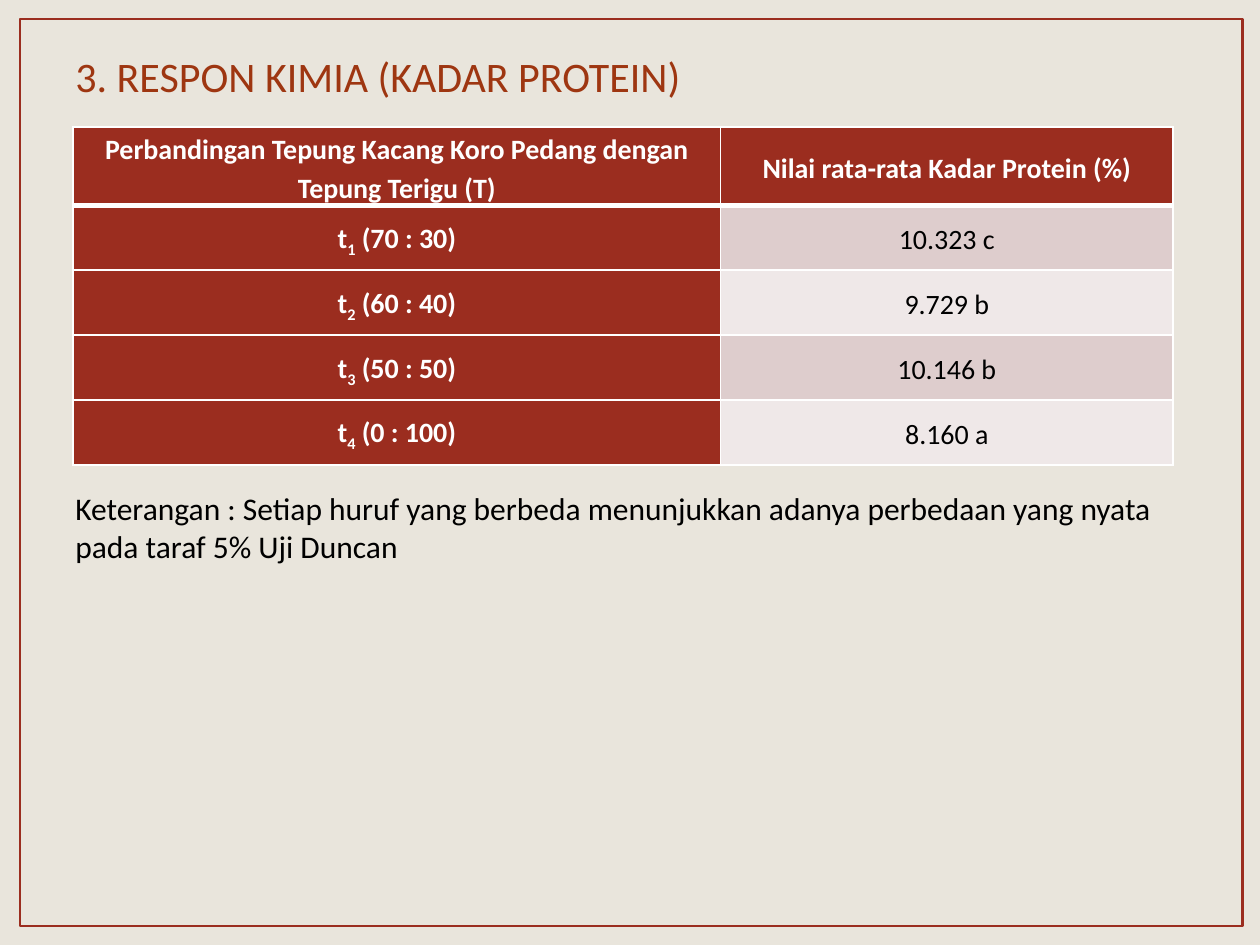
"""Build the protein response slide with its table of mean values."""
from lxml.etree import SubElement as Sub
from pptx import Presentation
from pptx.dml.color import RGBColor as RGB
from pptx.enum.shapes import MSO_SHAPE as Kind
from pptx.enum.text import MSO_ANCHOR as Anchor, PP_ALIGN as Align
from pptx.oxml.ns import qn
from pptx.util import Inches, Pt

RUST = RGB(0x9B, 0x2D, 0x1F)
TITLE = RGB(0x9E, 0x36, 0x11)
SAND = RGB(0xE9, 0xE5, 0xDC)
ROSE = RGB(0xDE, 0xCD, 0xCD)
PALE = RGB(0xEF, 0xE8, 0xE8)
WHITE = RGB(0xFF, 0xFF, 0xFF)
BLACK = RGB(0, 0, 0)

HEAD = ("Perbandingan Tepung Kacang Koro Pedang dengan Tepung Terigu (T)",
        "Nilai rata-rata Kadar Protein (%)")
ROWS = [("70 : 30", "10.323 c"), ("60 : 40", "9.729 b"),
        ("50 : 50", "10.146 b"), ("0 : 100", "8.160 a")]
COLS = (5.14, 3.59)
HIGH = (0.62,) + (0.515,) * len(ROWS)
CELL = {"vertical_anchor": Anchor.MIDDLE,
        "margin_left": Inches(0.07), "margin_right": Inches(0.07),
        "margin_top": 0, "margin_bottom": 0}
PARA = {"alignment": Align.CENTER, "line_spacing": 1.15}


def apply(item, form):
    for name, value in form.items():
        setattr(item, name, value)


def add_run(para, text, size, color, bold=False, base=0):
    run = para.add_run()
    run.text = text
    apply(run.font, {"name": "Calibri", "size": Pt(size), "bold": bold})
    run.font.color.rgb = color
    if base:
        run.font._element.set("baseline", str(base * 1000))


def add_text(slide, box, text, size, color):
    frame = slide.shapes.add_textbox(*map(Inches, box)).text_frame
    frame.word_wrap = True
    add_run(frame.paragraphs[0], text, size, color)


def add_frame(slide, box):
    frame = slide.shapes.add_shape(Kind.RECTANGLE, *map(Inches, box))
    frame.shadow.inherit = False
    frame.fill.background()
    frame.line.color.rgb = RUST
    frame.line.width = Pt(1.5)


def set_edges(cell, top, low):
    props = cell._tc.get_or_add_tcPr()
    for spot, (side, width) in enumerate(zip("LRTB", (1, 1, top, low))):
        edge = props.makeelement(qn(f"a:ln{side}"), {"w": str(Pt(width))})
        fill = Sub(edge, qn("a:solidFill"))
        Sub(fill, qn("a:srgbClr"), val=str(WHITE))
        props.insert(spot, edge)


def fill_cell(cell, parts, fill, color, bold, top=1, low=1):
    apply(cell, CELL)
    cell.fill.solid()
    cell.fill.fore_color.rgb = fill
    set_edges(cell, top, low)
    para = cell.text_frame.paragraphs[0]
    apply(para, PARA)
    for text, base in parts:
        add_run(para, text, 16, color, bold, base)


def add_grid(slide, left, top):
    box = map(Inches, (left, top, sum(COLS), sum(HIGH)))
    grid = slide.shapes.add_table(len(HIGH), len(COLS), *box).table
    for col, width in zip(grid.columns, COLS):
        col.width = Inches(width)
    for row, height in zip(grid.rows, HIGH):
        row.height = Inches(height)
    for col, text in enumerate(HEAD):
        fill_cell(grid.cell(0, col), [(text, 0)], RUST, WHITE, True, low=3)
    for row, (ratio, mean) in enumerate(ROWS, 1):
        edge = 3 if row == 1 else 1
        label = [("t", 0), (str(row), -25), (f" ({ratio})", 0)]
        band = ROSE if row % 2 else PALE
        fill_cell(grid.cell(row, 0), label, RUST, WHITE, True, top=edge)
        fill_cell(grid.cell(row, 1), [(mean, 0)], band, BLACK, False, top=edge)


def main():
    deck = Presentation()
    apply(deck, {"slide_width": Inches(10), "slide_height": Inches(7.5)})
    slide = deck.slides.add_slide(deck.slide_layouts[6])
    slide.background.fill.solid()
    slide.background.fill.fore_color.rgb = SAND
    add_frame(slide, (0.16, 0.15, 9.7, 7.2))
    add_text(slide, (0.5, 0.35, 9, 0.55),
             "3. RESPON KIMIA (KADAR PROTEIN)", 24, TITLE)
    add_grid(slide, 0.58, 1.01)
    add_text(slide, (0.5, 3.83, 8.83, 0.71),
             "Keterangan : Setiap huruf yang berbeda menunjukkan adanya "
             "perbedaan yang nyata pada taraf 5% Uji Duncan", 18, BLACK)
    deck.save("out.pptx")


if __name__ == "__main__":
    main()
